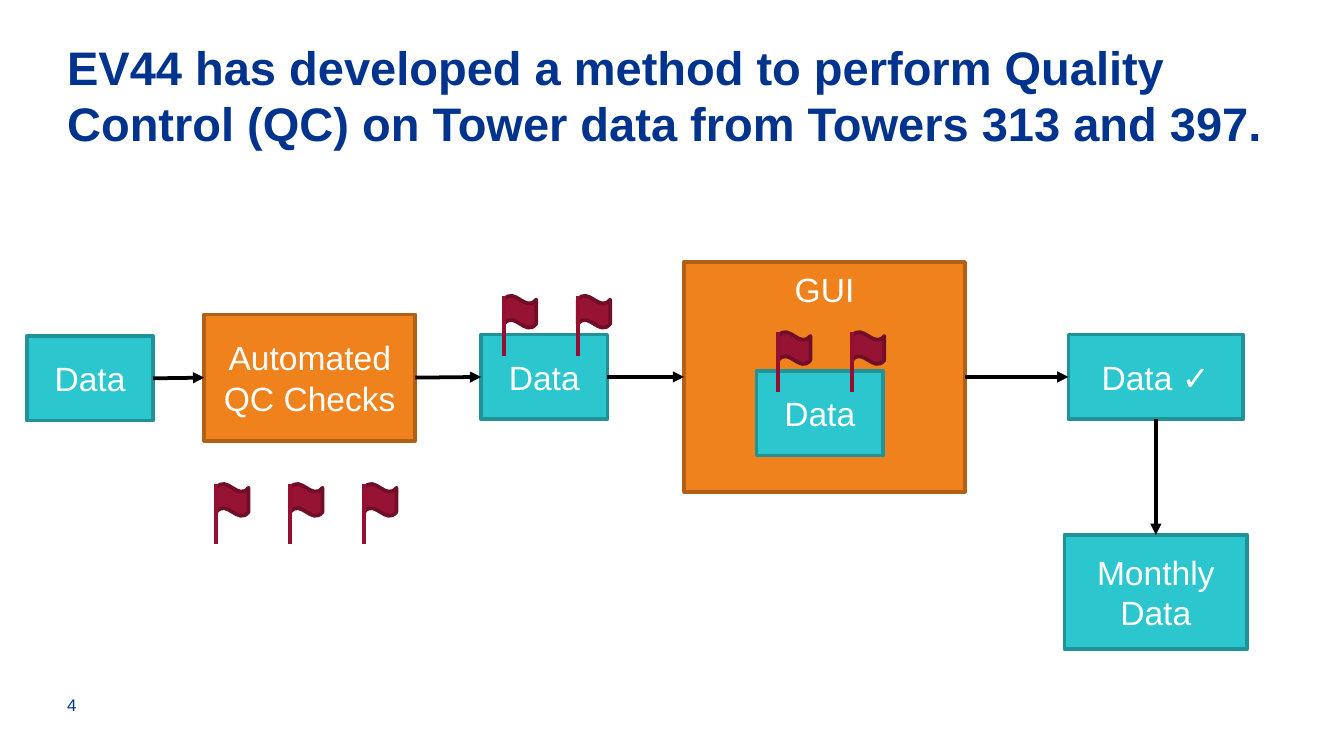
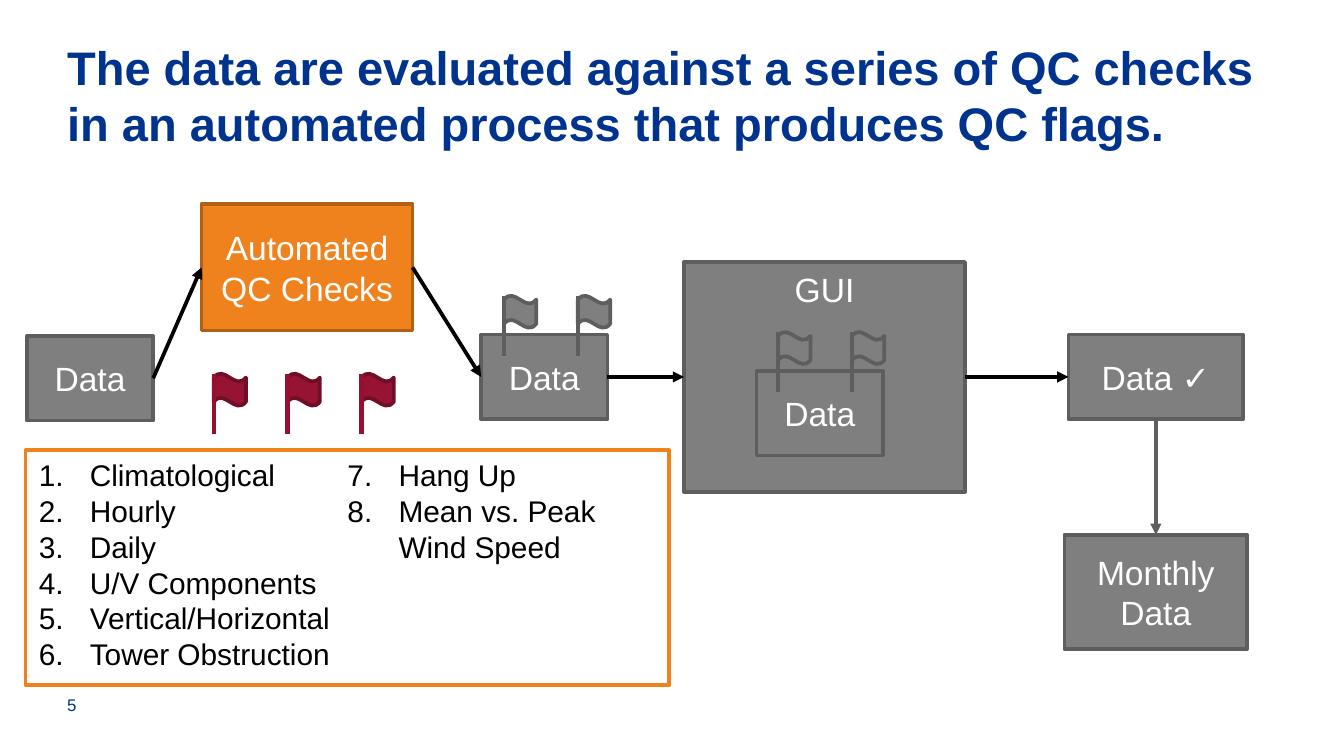
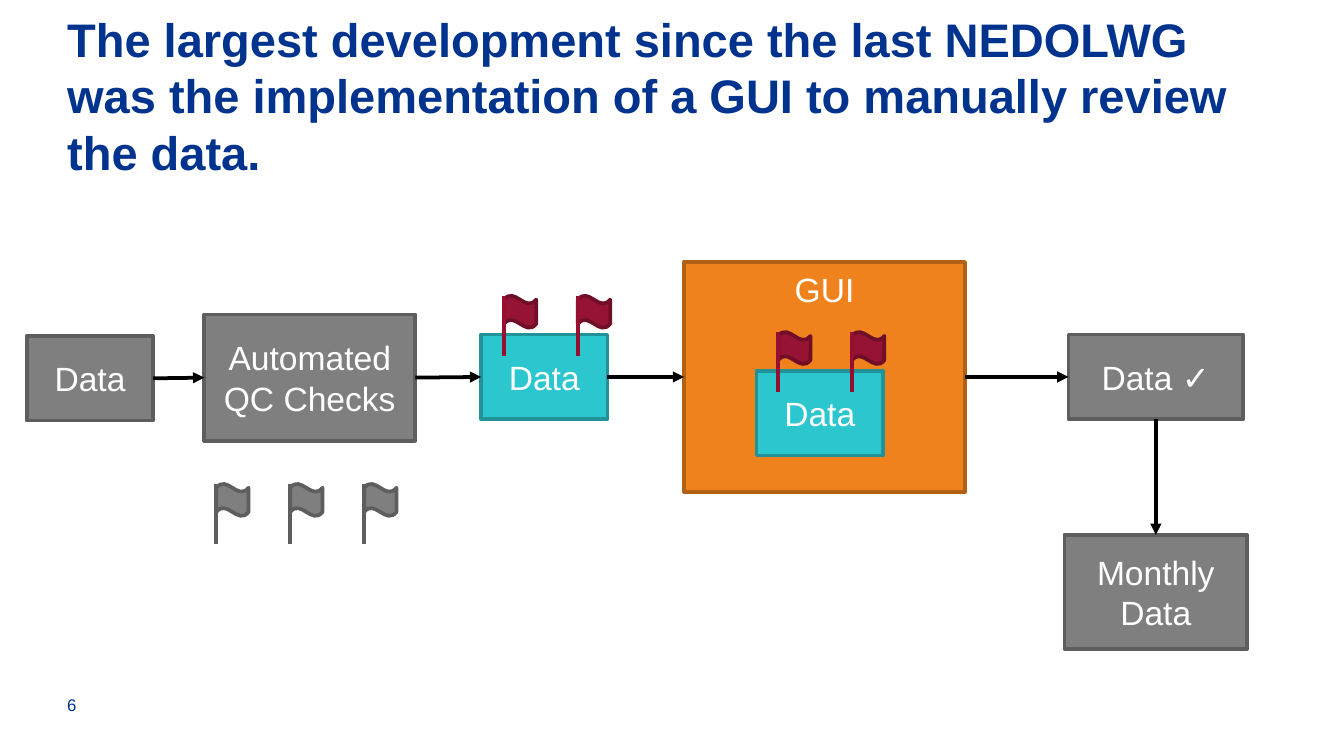
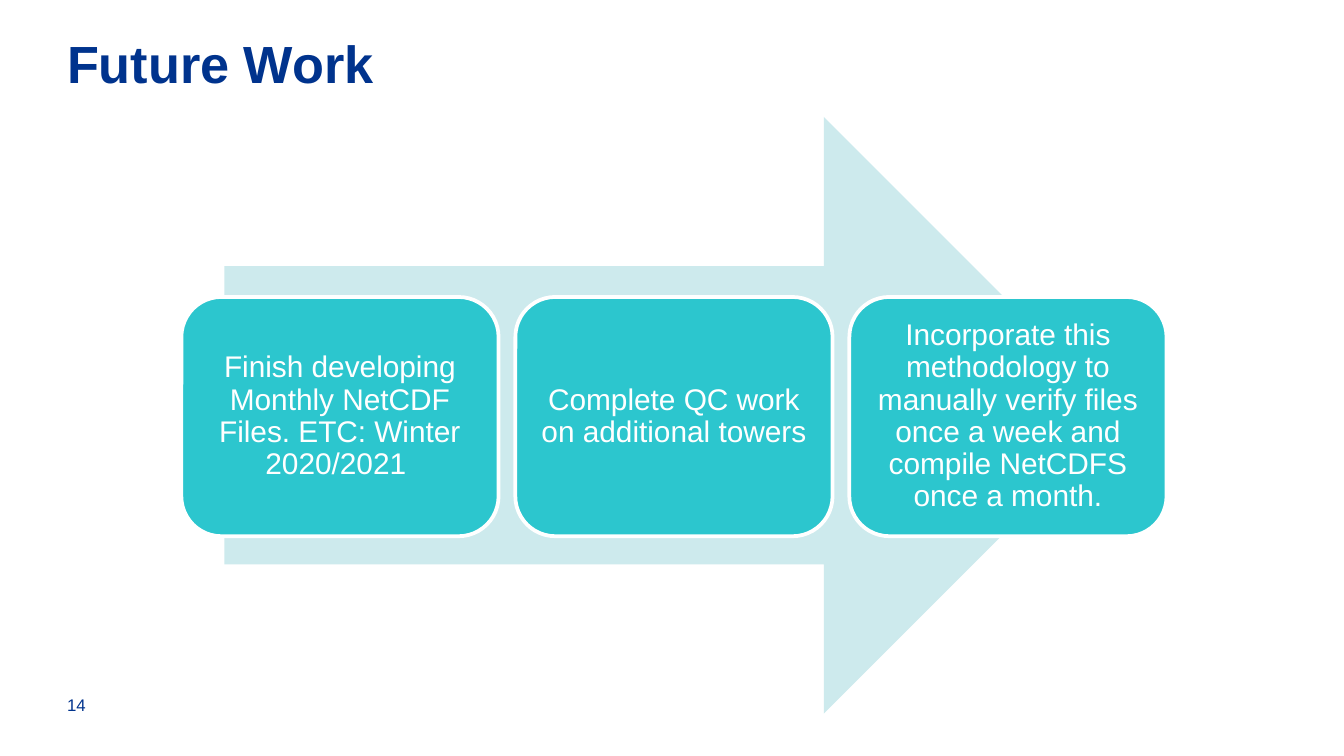
from dataclasses import dataclass, replace

from lxml import etree
from pptx import Presentation
from pptx.dml.color import RGBColor
from pptx.enum.shapes import MSO_CONNECTOR, MSO_SHAPE
from pptx.enum.text import MSO_ANCHOR, MSO_AUTO_SIZE, PP_ALIGN
from pptx.oxml.ns import qn
from pptx.util import Inches, Pt

RECT = MSO_SHAPE.RECTANGLE
ROUND_RECT = MSO_SHAPE.ROUNDED_RECTANGLE
RIGHT_ARROW = MSO_SHAPE.RIGHT_ARROW
WAVE = MSO_SHAPE.WAVE
STRAIGHT = MSO_CONNECTOR.STRAIGHT
TOP, MIDDLE, BOTTOM = MSO_ANCHOR.TOP, MSO_ANCHOR.MIDDLE, MSO_ANCHOR.BOTTOM
LEFT, CENTER = PP_ALIGN.LEFT, PP_ALIGN.CENTER
FIT_SHAPE = MSO_AUTO_SIZE.SHAPE_TO_FIT_TEXT

FONT = "Arial"
NAVY, WHITE, BLACK, PALE_TEAL = "00338D", "FFFFFF", "000000", "CDEAED"
SITE_TOP, SITE_LEFT, SITE_BOTTOM, SITE_RIGHT = range(4)
FLAG_SIZE, FLAG_STEP, POLE_HEIGHT = 0.24, 0.55, 0.45


@dataclass(frozen=True)
class Style:
    fill: str
    line: str
    pole: str = ""
    pole_width: float = 2


TEAL = Style("2CC6CE", "219298")
ORANGE = Style("EF821D", "B16015")
RED = Style("961334", "6F0E26", "960F31", 2.25)
GRAY = Style("7F7F7F", "5E5E5E", "5E5E5E")


@dataclass(frozen=True)
class Node:
    text: str
    left: float
    top: float
    width: float
    height: float
    style: Style = TEAL
    anchor: int = MIDDLE
    flags: int = 0
    flag_dx: float = 0
    flag_dy: float = 0


@dataclass(frozen=True)
class Arrow:
    start: str
    end: str
    start_site: int = SITE_RIGHT
    end_site: int = SITE_LEFT


NODES = {
    "raw": Node("Data", 0.2, 2.5, 0.94, 0.63),
    "checks": Node("Automated QC Checks", 1.52, 2.34, 1.57, 0.94, ORANGE,
                   flags=3, flag_dx=0.09, flag_dy=1.26),
    "flagged": Node("Data", 3.58, 2.49, 0.94, 0.63, flags=2, flag_dx=0.17, flag_dy=-0.29),
    "gui": Node("GUI", 5.09, 1.95, 2.09, 1.71, ORANGE, TOP),
    "reviewed": Node("Data", 5.63, 2.76, 0.94, 0.63, flags=2, flag_dx=0.16, flag_dy=-0.29),
    "verified": Node("Data ✓", 7.95, 2.49, 1.3, 0.63),
    "monthly": Node("Monthly Data", 7.92, 3.98, 1.36, 0.85),
}
RAISED_CHECKS = replace(NODES["checks"], left=1.5, top=1.52)
ARROWS = [
    Arrow("raw", "checks"),
    Arrow("checks", "flagged"),
    Arrow("flagged", "gui"),
    Arrow("gui", "verified"),
    Arrow("verified", "monthly", SITE_BOTTOM, SITE_TOP),
]
QC_CHECKS = ["Climatological", "Hourly", "Daily", "U/V Components", "Vertical/Horizontal",
             "Tower Obstruction", "Hang Up", "Mean vs. Peak Wind Speed"]
FUTURE_STEPS = [
    "Finish developing Monthly NetCDF Files. ETC: Winter 2020/2021 ",
    "Complete QC work on additional towers",
    "Incorporate this methodology to manually verify files once a week "
    "and compile NetCDFS once a month.",
]


def rgb(color: str) -> RGBColor:
    return RGBColor.from_string(color)


def format_text(tf, size: float, color: str, align=CENTER, bold: bool = False) -> None:
    for p in tf.paragraphs:
        p.alignment = align
        for r in p.runs:
            r.font.name = FONT
            r.font.size = Pt(size)
            r.font.bold = bold
            r.font.color.rgb = rgb(color)


def set_margins(tf, margin: float) -> None:
    tf.margin_left = tf.margin_right = tf.margin_top = tf.margin_bottom = Inches(margin)


def add_label(s, text: str, left: float, top: float, width: float, height: float,
              size: float, anchor, bold: bool = False) -> None:
    tf = s.shapes.add_textbox(Inches(left), Inches(top), Inches(width), Inches(height)).text_frame
    tf.word_wrap = True
    tf.vertical_anchor = anchor
    set_margins(tf, 0)
    tf.text = text
    format_text(tf, size, NAVY, LEFT, bold)


def add_slide(prs, title: str, number: int, title_top: float = 0.45, title_size: float = 25.2):
    s = prs.slides.add_slide(prs.slide_layouts[6])
    add_label(s, title, 0.5, title_top, 9.03, 0.51, title_size, MIDDLE, True)
    add_label(s, str(number), 0.5, 5.02, 0.64, 0.3, 9, BOTTOM)
    return s


def add_box(s, kind, left: float, top: float, width: float, height: float,
            fill: str, line: str = ""):
    sp = s.shapes.add_shape(kind, Inches(left), Inches(top), Inches(width), Inches(height))
    sp.shadow.inherit = False
    sp.fill.solid()
    sp.fill.fore_color.rgb = rgb(fill)
    if line:
        sp.line.color.rgb = rgb(line)
        sp.line.width = Pt(2)
    else:
        sp.line.fill.background()
    return sp


def add_line(s, x1: float, y1: float, x2: float, y2: float, color: str, width: float = 2):
    c = s.shapes.add_connector(STRAIGHT, Inches(x1), Inches(y1), Inches(x2), Inches(y2))
    c.line.color.rgb = rgb(color)
    c.line.width = Pt(width)
    etree.SubElement(c._element.spPr, qn("a:effectLst"))
    return c


def add_arrow(s, arrow: Arrow, boxes: dict, color: str) -> None:
    c = add_line(s, 0, 0, 1, 1, color)
    c.begin_connect(boxes[arrow.start], arrow.start_site)
    c.end_connect(boxes[arrow.end], arrow.end_site)
    ln = c._element.spPr.find(qn("a:ln"))
    etree.SubElement(ln, qn("a:tailEnd"), type="triangle")


def add_flag(s, left: float, top: float, style: Style) -> None:
    add_box(s, WAVE, left, top, FLAG_SIZE, FLAG_SIZE, style.fill, style.line)
    add_line(s, left, top, left, top + POLE_HEIGHT, style.pole, style.pole_width)


def add_node(s, node: Node, active: bool):
    style = node.style if active else GRAY
    sp = add_box(s, RECT, node.left, node.top, node.width, node.height, style.fill, style.line)
    tf = sp.text_frame
    tf.word_wrap = True
    tf.vertical_anchor = node.anchor
    tf.text = node.text
    format_text(tf, 18, WHITE)
    for i in range(node.flags):
        add_flag(s, node.left + node.flag_dx + i * FLAG_STEP, node.top + node.flag_dy,
                 RED if active else GRAY)
    return sp


def add_workflow(s, nodes: dict, active: set, last_arrow: str = BLACK) -> None:
    boxes = {name: add_node(s, node, name in active) for name, node in nodes.items()}
    for arrow in ARROWS:
        add_arrow(s, arrow, boxes, last_arrow if arrow is ARROWS[-1] else BLACK)


def add_check_list(s) -> None:
    sp = add_box(s, RECT, 0.19, 3.35, 4.79, 1.75, WHITE, ORANGE.fill)
    tf = sp.text_frame
    tf.word_wrap = True
    tf.auto_size = FIT_SHAPE
    tf.vertical_anchor = TOP
    sp._element.txBody.find(qn("a:bodyPr")).set("numCol", "2")
    tf.text = "\n".join(QC_CHECKS)
    for p in tf.paragraphs:
        pPr = p._p.get_or_add_pPr()
        pPr.set("marL", str(Inches(0.38)))
        pPr.set("indent", str(Inches(-0.38)))
        etree.SubElement(pPr, qn("a:buFont"), typeface=FONT)
        etree.SubElement(pPr, qn("a:buAutoNum"), type="arabicPeriod")
    format_text(tf, 16, BLACK, LEFT)


def add_future_steps(s) -> None:
    add_box(s, RIGHT_ARROW, 1.67, 0.87, 6.68, 4.44, PALE_TEAL)
    for i, text in enumerate(FUTURE_STEPS):
        sp = add_box(s, ROUND_RECT, 1.35 + i * 4.97 / 2, 2.21, 2.36, 1.78, TEAL.fill, WHITE)
        tf = sp.text_frame
        tf.word_wrap = True
        tf.vertical_anchor = MIDDLE
        set_margins(tf, 0.07)
        tf.text = text
        tf.paragraphs[0].line_spacing = 0.9
        format_text(tf, 16, WHITE)


def main() -> None:
    prs = Presentation()
    prs.slide_width = Inches(10)
    prs.slide_height = Inches(10) * 9 // 16

    s = add_slide(prs, "EV44 has developed a method to perform Quality Control (QC) "
                       "on Tower data from Towers 313 and 397.", 4)
    add_workflow(s, NODES, set(NODES))

    s = add_slide(prs, "The data are evaluated against a series of QC checks "
                       "in an automated process that produces QC flags.", 5)
    add_workflow(s, {**NODES, "checks": RAISED_CHECKS}, {"checks"}, GRAY.line)
    add_check_list(s)

    s = add_slide(prs, "The largest development since the last NEDOLWG was the implementation "
                       "of a GUI to manually review the data.", 6)
    add_workflow(s, NODES, {"flagged", "gui", "reviewed"})

    s = add_slide(prs, "Future Work", 14, 0.21, 28)
    add_future_steps(s)

    prs.save("out.pptx")


if __name__ == "__main__":
    main()
